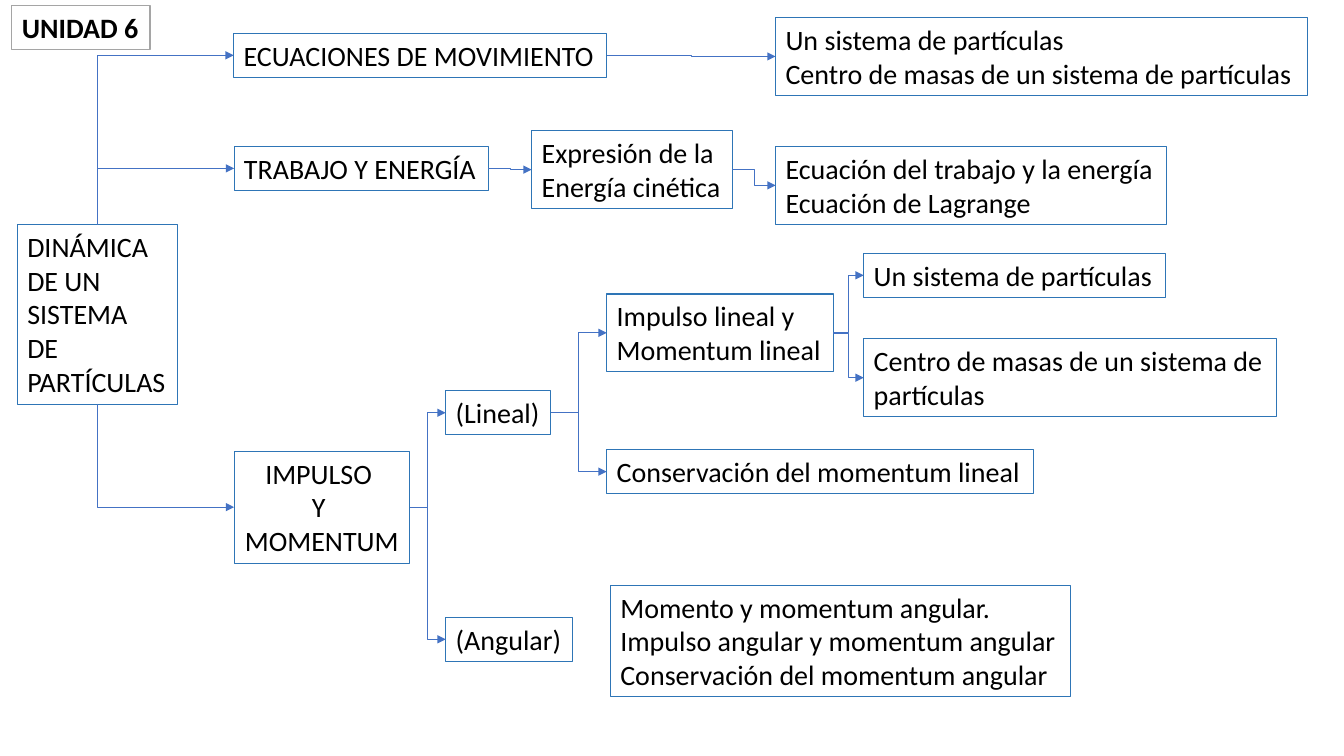
from lxml import etree
from pptx import Presentation
from pptx.dml.color import RGBColor
from pptx.enum.shapes import MSO_CONNECTOR
from pptx.enum.text import MSO_ANCHOR, MSO_AUTO_SIZE, PP_ALIGN
from pptx.oxml.ns import qn
from pptx.util import Pt

ELBOW = MSO_CONNECTOR.ELBOW
LEFT, CENTER = PP_ALIGN.LEFT, PP_ALIGN.CENTER
FIXED, GROW = MSO_AUTO_SIZE.NONE, MSO_AUTO_SIZE.SHAPE_TO_FIT_TEXT
TOP_SITE, LEFT_SITE, BOTTOM_SITE, RIGHT_SITE = range(4)
LINE_HEIGHT, PADDING = 24.2, 7.2


def rgb(value):
    return RGBColor.from_string(value)


def fill_box(s, left, top, width, text, align=LEFT, border="2E75B6", bold=False,
             auto_size=GROW):
    """Place a bordered box whose height follows its number of text lines."""
    lines = text.split("\n")
    bounds = {"left": left, "top": top, "width": width,
              "height": PADDING + LINE_HEIGHT * len(lines)}
    for name, value in bounds.items():
        setattr(s, name, Pt(value))
    s.line.color.rgb = rgb(border)
    s.line.width = Pt(0.75)
    tf = s.text_frame
    tf.text = text
    frame = {"word_wrap": False, "auto_size": auto_size,
             "vertical_anchor": MSO_ANCHOR.TOP}
    for name, value in frame.items():
        setattr(tf, name, value)
    for p in tf.paragraphs:
        p.alignment = align
        font = p.runs[0].font
        for name, value in {"name": "Calibri", "size": Pt(20), "bold": bold}.items():
            setattr(font, name, value)
        font.color.rgb = rgb("000000")


prs = Presentation()
prs.slide_width, prs.slide_height = Pt(960), Pt(540)
slide = prs.slides.add_slide(prs.slide_layouts[5])
fill_box(slide.shapes.title, 8.4, 4.2, 98.8, "UNIDAD 6", border="A5A5A5", bold=True,
         auto_size=FIXED)

# name: left, top, width, text, alignment
boxes = {
    "dinamica": (12.4, 160.4, 114.2, "DINÁMICA\nDE UN\nSISTEMA\nDE\nPARTÍCULAS", LEFT),
    "ecuaciones": (167, 23.9, 266.4, "ECUACIONES DE MOVIMIENTO", LEFT),
    "sistema y centro": (554, 12.5, 380.2,
                         "Un sistema de partículas\n"
                         "Centro de masas de un sistema de partículas", LEFT),
    "trabajo": (167.2, 104.6, 181.6, "TRABAJO Y ENERGÍA", LEFT),
    "lagrange": (554, 104.6, 279.4,
                 "Ecuación del trabajo y la energía\nEcuación de Lagrange", LEFT),
    "cinetica": (379.8, 93.4, 143.4, "Expresión de la\nEnergía cinética", LEFT),
    "impulso": (167.2, 322.4, 125.4, "IMPULSO \nY \nMOMENTUM", CENTER),
    "sistema": (617, 181, 215.6, "Un sistema de partículas", LEFT),
    "lineal": (318.4, 279.2, 75.2, "(Lineal)", LEFT),
    "angular": (318.4, 441, 90.8, "(Angular)", LEFT),
    "impulso lineal": (433.4, 210, 162, "Impulso lineal y\nMomentum lineal", LEFT),
    "centro": (617, 242, 295, "Centro de masas de un sistema de\npartículas", LEFT),
    "conservacion": (433.4, 321.2, 305, "Conservación del momentum lineal", LEFT),
    "momento angular": (436, 418, 328.4,
                        "Momento y momentum angular.\nImpulso angular y momentum angular\n"
                        "Conservación del momentum angular", LEFT),
}
shapes = {}
for name, box in boxes.items():
    shapes[name] = slide.shapes.add_textbox(0, 0, 0, 0)
    fill_box(shapes[name], *box)

links = [
    ("dinamica", BOTTOM_SITE, "impulso"),
    ("dinamica", TOP_SITE, "trabajo"),
    ("dinamica", TOP_SITE, "ecuaciones"),
    ("impulso", RIGHT_SITE, "angular"),
    ("impulso", RIGHT_SITE, "lineal"),
    ("lineal", RIGHT_SITE, "impulso lineal"),
    ("impulso lineal", RIGHT_SITE, "sistema"),
    ("impulso lineal", RIGHT_SITE, "centro"),
    ("trabajo", RIGHT_SITE, "cinetica"),
    ("ecuaciones", RIGHT_SITE, "sistema y centro"),
    ("cinetica", RIGHT_SITE, "lagrange"),
    ("lineal", RIGHT_SITE, "conservacion"),
]
for source, site, target in links:
    link = slide.shapes.add_connector(ELBOW, 0, 0, 0, 0)
    link.begin_connect(shapes[source], site)
    link.end_connect(shapes[target], LEFT_SITE)
    link.line.color.rgb = rgb("4472C4")
    link.line.width = Pt(0.5)
    spPr = link._element.spPr
    etree.SubElement(spPr.find(qn("a:ln")), qn("a:tailEnd"), type="triangle")
    etree.SubElement(spPr, qn("a:effectLst"))
    if site != RIGHT_SITE:
        # One bend, vertical leg first: turn the shape a quarter about its centre
        shift = (link.width - link.height) // 2
        link.left, link.top = link.left + shift, link.top - shift
        link.width, link.height = link.height, link.width
        upward = site == TOP_SITE
        xfrm = spPr.find(qn("a:xfrm"))
        xfrm.set("rot", "5400000" if upward else "16200000")
        xfrm.set("flipH", "1")
        xfrm.set("flipV", "1" if upward else "0")
        spPr.find(qn("a:prstGeom")).set("prst", "bentConnector2")

prs.save("out.pptx")
